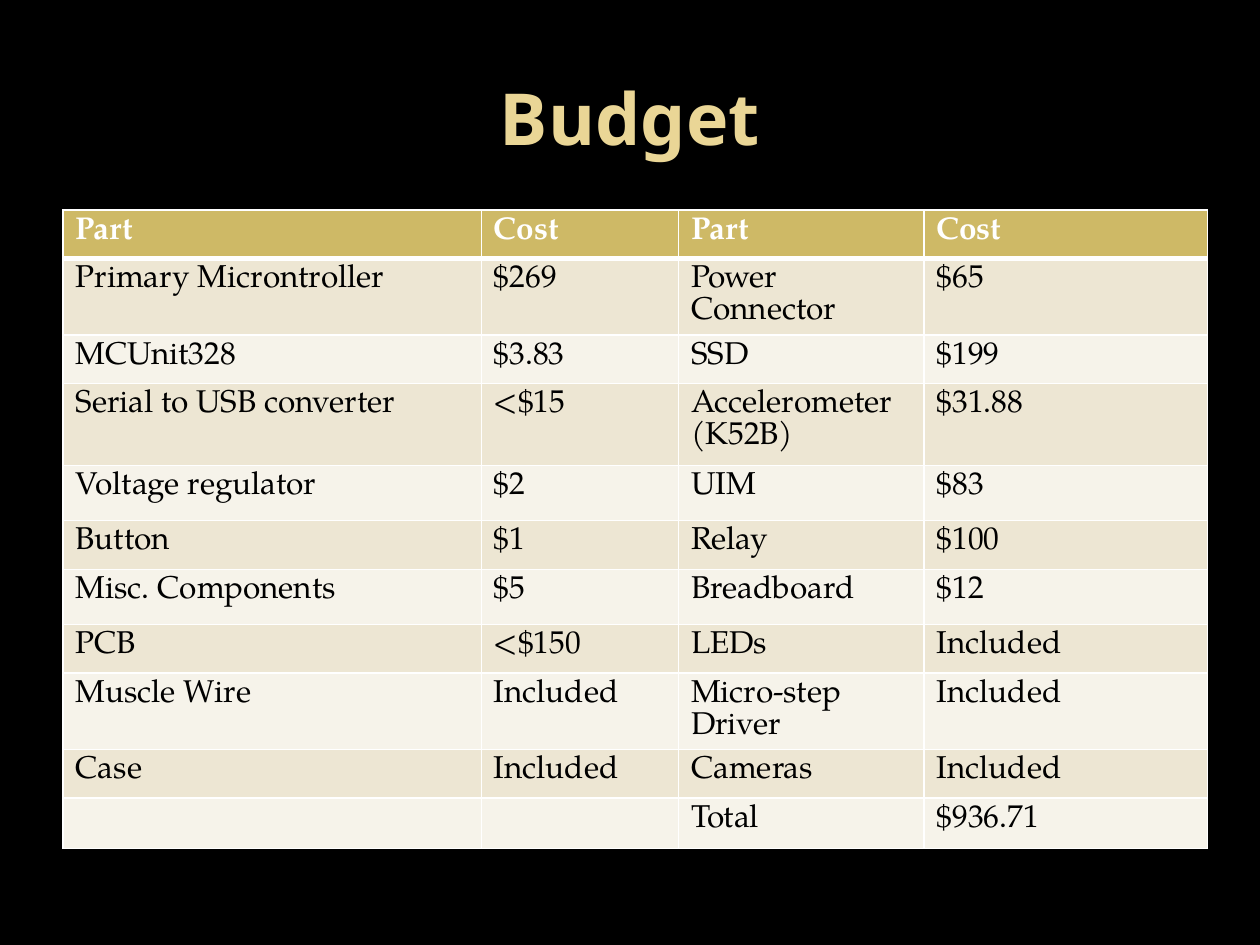
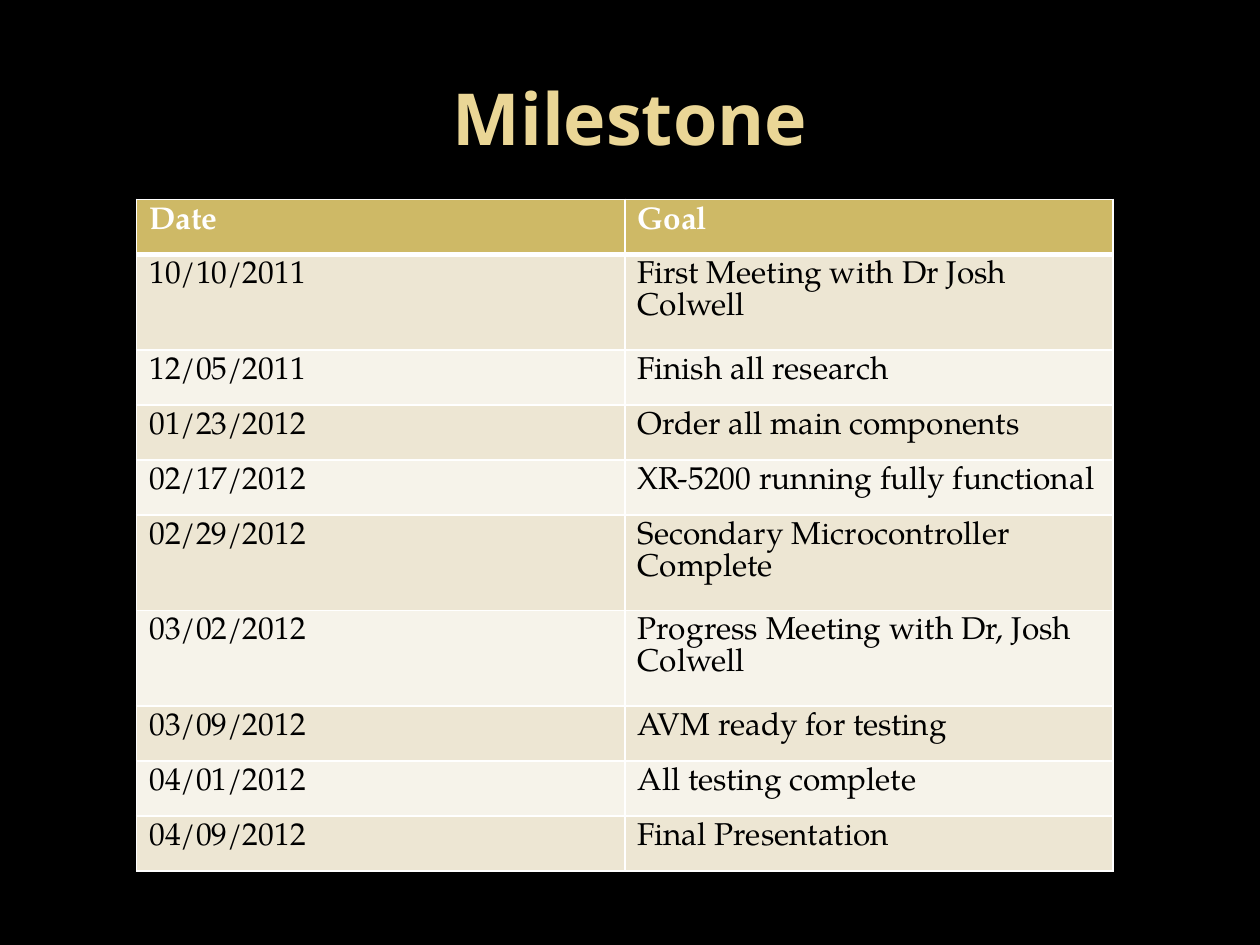
import pptx
import pptx.dml.color
import pptx.enum.text
import pptx.oxml
import pptx.oxml.ns
import pptx.util

RGBColor = pptx.dml.color.RGBColor
BLACK = RGBColor(0x00, 0x00, 0x00)
WHITE = RGBColor(0xFF, 0xFF, 0xFF)
PALE_GOLD = RGBColor(0xEA, 0xD6, 0x96)
HEADER_GOLD = RGBColor(0xCE, 0xB9, 0x66)
BANDS = [RGBColor(0xF6, 0xF3, 0xEA), RGBColor(0xED, 0xE6, 0xD3)]

TITLE_FONT = "Noto Sans"
TABLE_FONT = "TeX Gyre Pagella"
TABLE_LEADING = pptx.util.Pt(18.2)

deck = pptx.Presentation()
deck.slide_width = pptx.util.Inches(10)
deck.slide_height = pptx.util.Inches(7.5)
X = deck.slide_width / 100   # one percent of the slide's width
Y = deck.slide_height / 100  # one percent of the slide's height

# Row heights, in percent of the slide's height
SLIM, SINGLE, DOUBLE, ROOMY, TALL = 5.15, 5.83, 8, 8.67, 10.1

budget = [
    (SLIM, "Part", "Cost", "Part", "Cost"),
    (DOUBLE, "Primary Microntroller", "$269", "Power Connector", "$65"),
    (SLIM, "MCUnit328", "$3.83", "SSD", "$199"),
    (ROOMY, "Serial to USB converter", "<$15", "Accelerometer\n(K52B)", "$31.88"),
    (SINGLE, "Voltage regulator", "$2", "UIM", "$83"),
    (SLIM, "Button", "$1", "Relay", "$100"),
    (SINGLE, "Misc. Components", "$5", "Breadboard", "$12"),
    (SLIM, "PCB", "<$150", "LEDs", "Included"),
    (DOUBLE, "Muscle Wire", "Included", "Micro-step Driver", "Included"),
    (SLIM, "Case", "Included", "Cameras", "Included"),
    (SLIM, "", "", "Total", "$936.71"),
]
milestones = [
    (SINGLE, "Date", "Goal"),
    (TALL, "10/10/2011", "First Meeting with Dr Josh Colwell"),
    (SINGLE, "12/05/2011", "Finish all research"),
    (SINGLE, "01/23/2012", "Order all main components"),
    (SINGLE, "02/17/2012", "XR-5200 running fully functional"),
    (TALL, "02/29/2012", "Secondary Microcontroller Complete"),
    (TALL, "03/02/2012", "Progress Meeting with Dr, Josh Colwell"),
    (SINGLE, "03/09/2012", "AVM ready for testing"),
    (SINGLE, "04/01/2012", "All testing complete"),
    (SINGLE, "04/09/2012", "Final Presentation"),
]
# Title, left and top of the table, column widths, rows
pages = [
    ("Budget", 5, 22.22, [33.2, 15.65, 19.5, 22.5], budget),
    ("Milestone", 10.85, 21.1, [38.75, 38.75], milestones),
]


def write(frame, text, font=TABLE_FONT, size=18, color=BLACK, bold=False,
          align=None, leading=None):
    frame.text = text
    for paragraph in frame.paragraphs:
        paragraph.alignment = align
        paragraph.line_spacing = leading
        for run in paragraph.runs:
            run.font.name = font
            run.font.size = pptx.util.Pt(size)
            run.font.color.rgb = color
            run.font.bold = bold


def rule_cell(cell, **widths):
    """Draw white borders; widths are points keyed by side: L, R, T, B."""
    properties = cell._tc.get_or_add_tcPr()
    for place, (side, width) in enumerate(widths.items()):
        border = pptx.oxml.parse_xml(
            f'<a:ln{side} {pptx.oxml.ns.nsdecls("a")} w="{pptx.util.Pt(width)}">'
            f'<a:solidFill><a:srgbClr val="{WHITE}"/></a:solidFill></a:ln{side}>')
        properties.insert(place, border)


for title, left, top, widths, rows in pages:
    slide = deck.slides.add_slide(deck.slide_layouts[6])
    slide.background.fill.solid()
    slide.background.fill.fore_color.rgb = BLACK

    heading = slide.shapes.add_textbox(int(5 * X), int(4 * Y), int(90 * X), int(16.67 * Y))
    heading.text_frame.word_wrap = True
    heading.text_frame.vertical_anchor = pptx.enum.text.MSO_ANCHOR.MIDDLE
    write(heading.text_frame, title, font=TITLE_FONT, size=41, color=PALE_GOLD,
          bold=True, align=pptx.enum.text.PP_ALIGN.CENTER)

    schedule = slide.shapes.add_table(
        len(rows), len(widths), int(left * X), int(top * Y),
        int(sum(widths) * X), int(sum(row[0] for row in rows) * Y)).table
    for column, width in zip(schedule.columns, widths):
        column.width = int(width * X)

    for r, (height, *entries) in enumerate(rows):
        schedule.rows[r].height = int(height * Y)
        is_header = r == 0
        for c, entry in enumerate(entries):
            cell = schedule.cell(r, c)
            cell.fill.solid()
            cell.fill.fore_color.rgb = HEADER_GOLD if is_header else BANDS[r % 2]
            write(cell.text_frame, entry, color=WHITE if is_header else BLACK,
                  bold=is_header, leading=TABLE_LEADING)
            rule_cell(cell, L=1, R=1, T=3 if r == 1 else 1, B=3 if is_header else 1)

deck.save("out.pptx")
